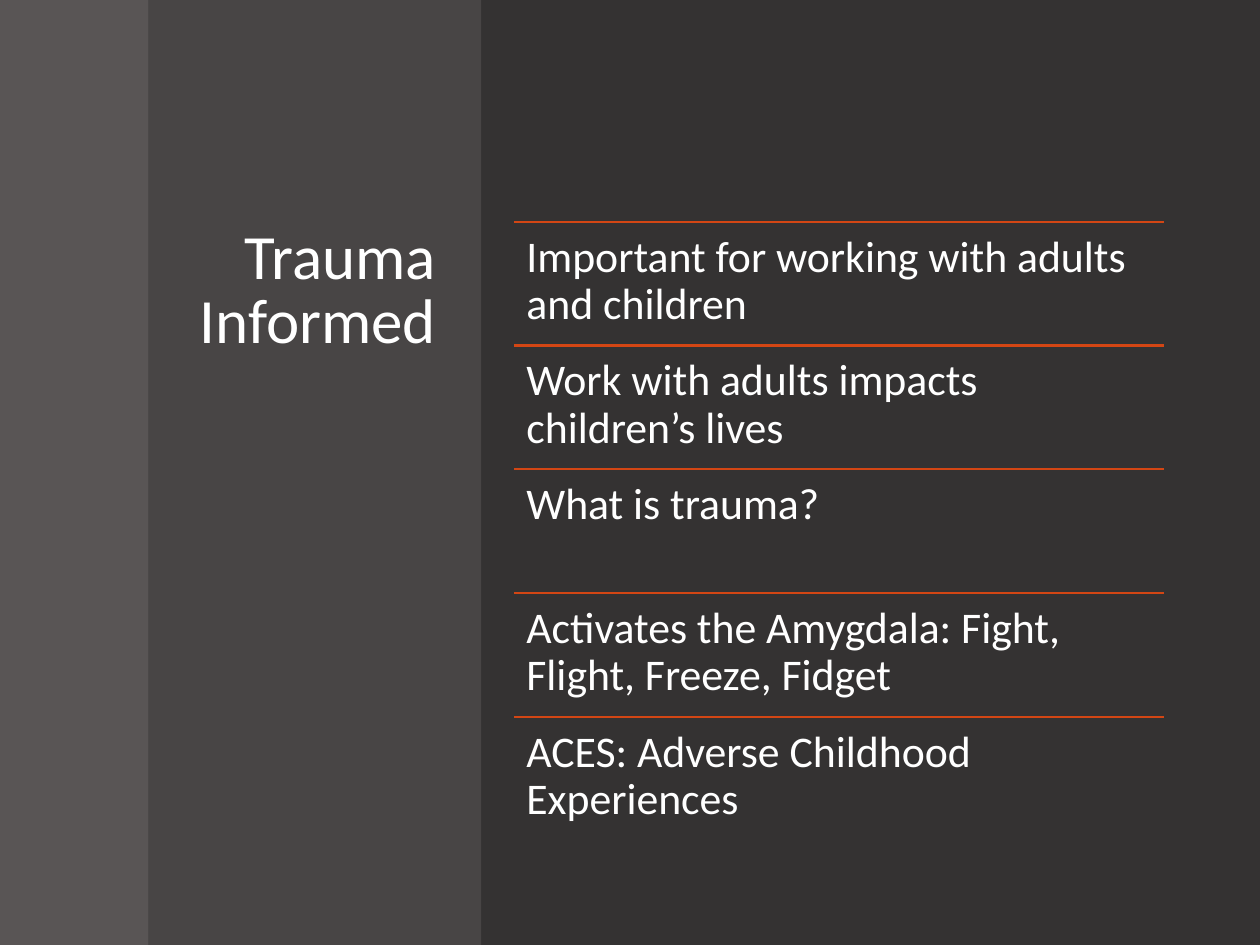
"""Build the Trauma Informed slide: a titled side panel and a ruled list of points."""
from dataclasses import dataclass

from lxml.etree import SubElement
from pptx import Presentation
from pptx.dml.color import RGBColor
from pptx.enum.shapes import MSO_CONNECTOR, MSO_SHAPE
from pptx.enum.text import MSO_ANCHOR, PP_ALIGN
from pptx.oxml.ns import qn
from pptx.util import Inches, Pt

TITLE = "Trauma Informed"
POINTS = [
    "Important for working with adults and children",
    "Work with adults impacts children’s lives",
    "What is trauma?",
    "Activates the Amygdala: Fight, Flight, Freeze, Fidget",
    "ACES: Adverse Childhood Experiences",
]


@dataclass(frozen=True)
class Theme:
    font: str = "Calibri"
    text: str = "FFFFFF"
    rule: str = "D34614"
    base: str = "343232"
    edge: str = "696464"
    panel: str = "4E4A4A"
    title_size: float = 36
    point_size: float = 25
    rule_width: float = 1.25


THEME = Theme()
WIDTH, HEIGHT = 10, 7.5
EDGE_WIDTH, PANEL_WIDTH = 1.18, 2.64
CONTENT_TOP, CONTENT_HEIGHT = 1.76, 4.91
TITLE_LEFT, TITLE_WIDTH = 1.46, 2.1
LIST_LEFT, LIST_WIDTH = 4.08, 5.16
BANDS = [
    (0, WIDTH, THEME.base, 100),
    (0, EDGE_WIDTH, THEME.edge, 70),
    (EDGE_WIDTH, PANEL_WIDTH, THEME.panel, 80),
]


def add_band(slide, left, width, color, opacity):
    shape = slide.shapes.add_shape(
        MSO_SHAPE.RECTANGLE, Inches(left), 0, Inches(width), Inches(HEIGHT))
    shape.shadow.inherit = False
    shape.line.fill.background()
    shape.fill.solid()
    shape.fill.fore_color.rgb = RGBColor.from_string(color)
    if opacity < 100:
        color_element = shape.fill._xPr.find(qn("a:solidFill"))[0]
        SubElement(color_element, qn("a:alpha"), val=str(opacity * 1000))


def add_text(slide, text, *, left, top, width, height, size, spacing,
             align=PP_ALIGN.LEFT, vertical_inset=0.1):
    box = slide.shapes.add_textbox(*map(Inches, (left, top, width, height)))
    frame = box.text_frame
    frame.word_wrap = True
    frame.vertical_anchor = MSO_ANCHOR.TOP
    frame.margin_left = frame.margin_right = Inches(0.1)
    frame.margin_top = frame.margin_bottom = Inches(vertical_inset)
    paragraph = frame.paragraphs[0]
    paragraph.alignment = align
    paragraph.line_spacing = spacing
    run = paragraph.add_run()
    run.text = text
    run.font.name = THEME.font
    run.font.size = Pt(size)
    run.font.color.rgb = RGBColor.from_string(THEME.text)


def add_rule(slide, top):
    rule = slide.shapes.add_connector(
        MSO_CONNECTOR.STRAIGHT, Inches(LIST_LEFT), Inches(top),
        Inches(LIST_LEFT + LIST_WIDTH), Inches(top))
    rule.line.color.rgb = RGBColor.from_string(THEME.rule)
    rule.line.width = Pt(THEME.rule_width)
    SubElement(rule._element.spPr, qn("a:effectLst"))


def main():
    presentation = Presentation()
    presentation.slide_width = Inches(WIDTH)
    presentation.slide_height = Inches(HEIGHT)
    slide = presentation.slides.add_slide(presentation.slide_layouts[6])
    for band in BANDS:
        add_band(slide, *band)
    add_text(slide, TITLE, left=TITLE_LEFT, top=CONTENT_TOP, width=TITLE_WIDTH,
             height=CONTENT_HEIGHT, size=THEME.title_size, spacing=0.85,
             align=PP_ALIGN.RIGHT, vertical_inset=0.05)
    row_height = CONTENT_HEIGHT / len(POINTS)
    for row, point in enumerate(POINTS):
        top = CONTENT_TOP + row * row_height
        add_rule(slide, top)
        add_text(slide, point, left=LIST_LEFT, top=top, width=LIST_WIDTH,
                 height=row_height, size=THEME.point_size, spacing=0.9)
    presentation.save("out.pptx")


if __name__ == "__main__":
    main()
